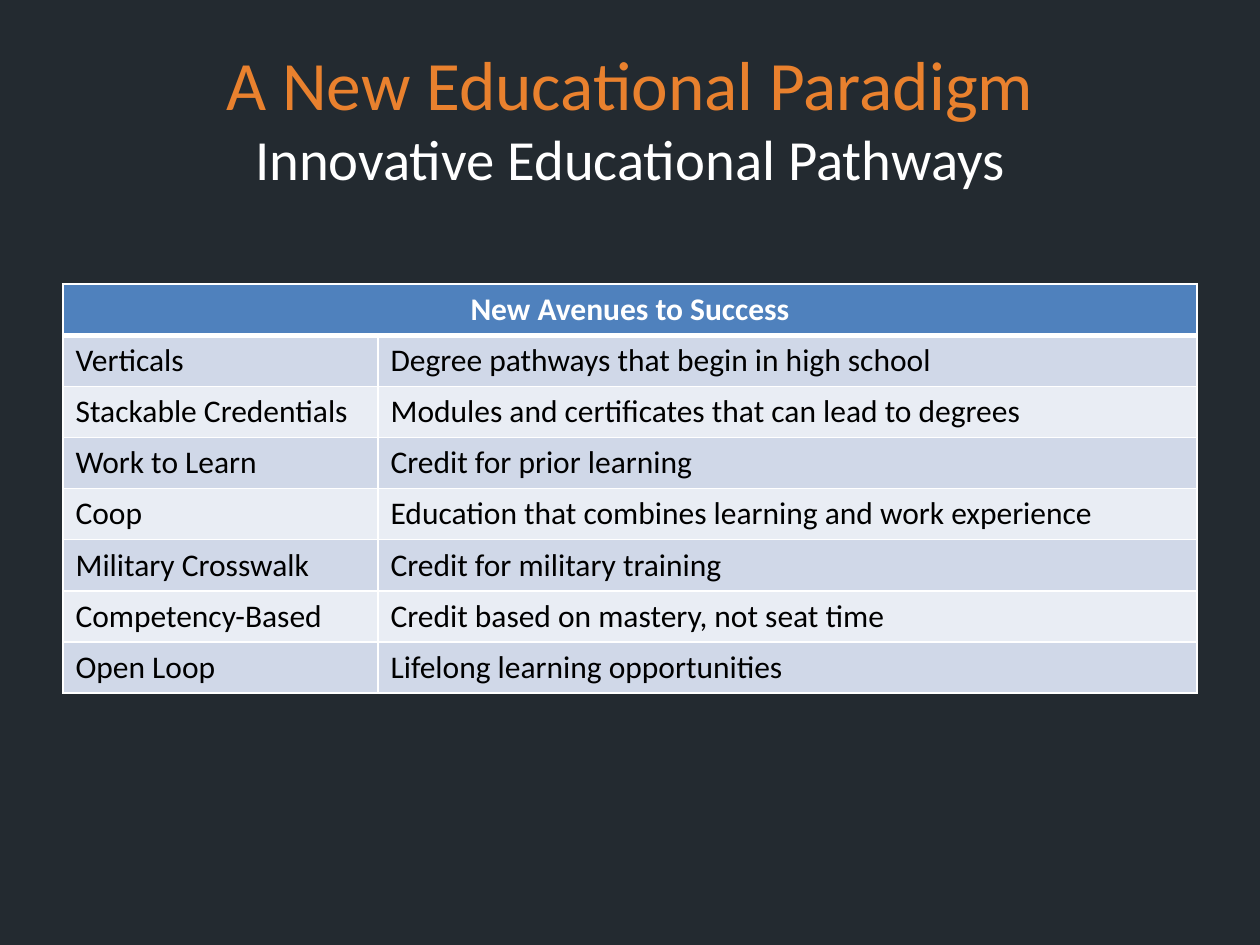
from lxml import etree
from pptx import Presentation
from pptx import util as u
from pptx.dml.color import RGBColor
from pptx.enum import text
from pptx.oxml import ns

FONT = "Calibri"
WHITE = "FFFFFF"
HEADER_FILL = "4F81BD"
BAND_FILLS = ("D0D8E8", "E9EDF4")
AVENUES = [
    ("Verticals", "Degree pathways that begin in high school"),
    ("Stackable Credentials", "Modules and certificates that can lead to degrees"),
    ("Work to Learn", "Credit for prior learning"),
    ("Coop", "Education that combines learning and work experience"),
    ("Military Crosswalk", "Credit for military training"),
    ("Competency-Based", "Credit based on mastery, not seat time"),
    ("Open Loop", "Lifelong learning opportunities"),
]


def color(value):
    return RGBColor.from_string(value)


def add_run(paragraph, words, size, value, bold=False):
    run = paragraph.add_run()
    run.text = words
    run.font.name = FONT
    run.font.size = u.Pt(size)
    run.font.bold = bold
    run.font.color.rgb = color(value)


def set_borders(cell, widths):
    properties = cell._tc.get_or_add_tcPr()
    for index, (side, width) in enumerate(widths.items()):
        line = etree.Element(ns.qn(f"a:ln{side}"), w=str(u.Pt(width)))
        fill = etree.SubElement(line, ns.qn("a:solidFill"))
        etree.SubElement(fill, ns.qn("a:srgbClr"), val=WHITE)
        properties.insert(index, line)


def fill_cell(cell, words, fill, value, bold=False):
    cell.fill.solid()
    cell.fill.fore_color.rgb = color(fill)
    paragraph = cell.text_frame.paragraphs[0]
    add_run(paragraph, words, 18, value, bold)
    return paragraph


def add_title(slide, left, top, width, height):
    shape = slide.shapes.add_textbox(left, top, width, height)
    frame = shape.text_frame
    frame.word_wrap = True
    frame.vertical_anchor = text.MSO_ANCHOR.MIDDLE
    paragraph = frame.paragraphs[0]
    paragraph.alignment = text.PP_ALIGN.CENTER
    add_run(paragraph, "A New Educational Paradigm", 39.6, "E9812E")
    paragraph.add_line_break()
    add_run(paragraph, "Innovative Educational Pathways", 32.4, WHITE)


def add_avenues(slide, left, top, width, height):
    row_count = len(AVENUES) + 1
    table = slide.shapes.add_table(row_count, 2, left, top, width, height).table
    table.columns[0].width = u.Cm(6.35)
    table.columns[1].width = width - u.Cm(6.35)
    for row in table.rows:
        row.height = height // row_count

    header = table.cell(0, 0)
    header.merge(table.cell(0, 1))
    paragraph = fill_cell(header, "New Avenues to Success", HEADER_FILL, WHITE, True)
    paragraph.alignment = text.PP_ALIGN.CENTER

    for number, avenue in enumerate(AVENUES, start=1):
        for column, words in enumerate(avenue):
            fill = BAND_FILLS[(number - 1) % 2]
            fill_cell(table.cell(number, column), words, fill, "000000")

    for number, row in enumerate(table.rows):
        widths = {"L": 1, "R": 1, "T": 3 if number == 1 else 1, "B": 3 if number == 0 else 1}
        for cell in row.cells:
            set_borders(cell, widths)


def main():
    presentation = Presentation()
    presentation.slide_width = u.Cm(25.4)
    presentation.slide_height = u.Cm(19.05)
    slide = presentation.slides.add_slide(presentation.slide_layouts[6])
    slide.background.fill.solid()
    slide.background.fill.fore_color.rgb = color("232A30")
    margin = u.Cm(1.27)
    width = presentation.slide_width - 2 * margin
    add_title(slide, margin, u.Cm(0.76), width, u.Cm(3.18))
    add_avenues(slide, margin, u.Cm(5.73), width, u.Cm(8.24))
    presentation.save("out.pptx")


if __name__ == "__main__":
    main()
